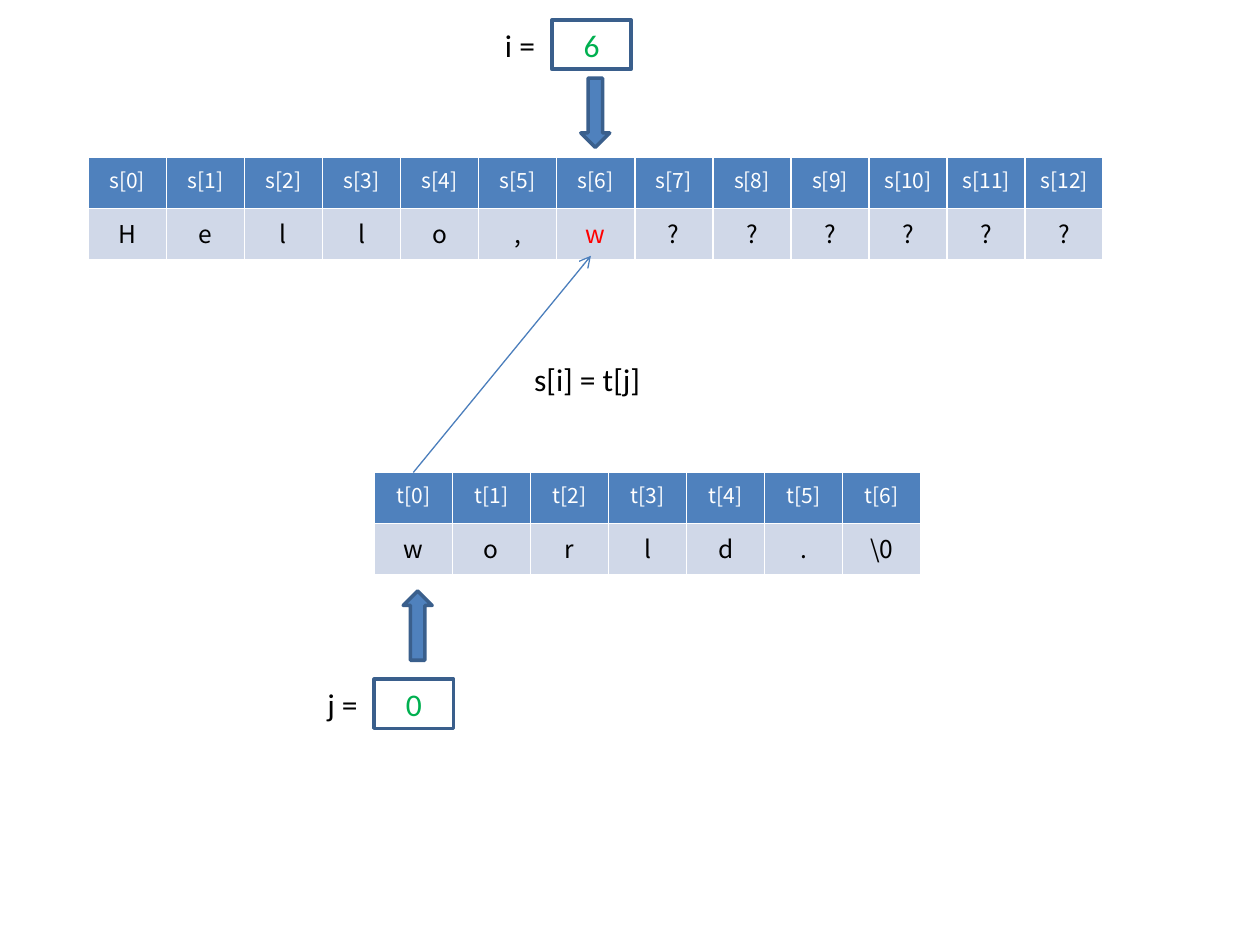
from dataclasses import dataclass

from lxml import etree
from pptx import Presentation
from pptx import util as u
from pptx.dml.color import RGBColor
from pptx.enum import shapes, text
from pptx.oxml import ns

# Content: array name, cell values, left, top, index of the highlighted cell
ARRAYS = [
    ("s", ["H", "e", "l", "l", "o", ",", "w"] + ["?"] * 6, 0.7, 1.25, 6),
    ("t", ["w", "o", "r", "l", "d", ".", "\\0"], 2.97, 3.75, None),
]
# Counters: label, label left, value, box left, top
COUNTERS = [("i =", 3.91, "6", 4.38, 0.16), ("j =", 2.5, "0", 2.97, 5.39)]
# Pointers: left, top, rotation
POINTERS = [(4.61, 0.62, 0), (3.2, 4.69, 180)]
ASSIGNMENT = ("s[i] = t[j]", 4.14, 2.81, 1.05)
COPY_FROM, COPY_TO = (3.28, 3.75), (4.69, 2.03)

COLUMN, ROW = 0.62, 0.405
BOX_WIDTH, BOX_HEIGHT = 0.63, 0.39
LABEL_WIDTH, LABEL_HEIGHT = 0.44, 0.4
POINTER_WIDTH, POINTER_HEIGHT = 0.23, 0.55


@dataclass(frozen=True)
class Theme:
    blue: str = "4F81BD"
    outline: str = "3A5F8C"
    link: str = "4B7EBC"
    band: str = "D0D8E8"
    white: str = "FFFFFF"
    black: str = "000000"
    red: str = "FF0000"
    green: str = "00B050"
    table_font: str = "Noto Sans CJK JP"
    font: str = "Calibri"
    header_size: int = 12
    cell_size: int = 14
    label_size: int = 18


THEME = Theme()


def rgb(color):
    return RGBColor.from_string(color)


def inches(*lengths):
    return [u.Inches(length) for length in lengths]


def write(frame, words, font, size, color, align=text.PP_ALIGN.CENTER):
    paragraph = frame.paragraphs[0]
    paragraph.text = words
    paragraph.alignment = align
    paragraph.font.name = font
    paragraph.font.size = u.Pt(size)
    paragraph.font.color.rgb = rgb(color)


def set_borders(cell, color, width):
    properties = cell._tc.get_or_add_tcPr()
    for position, side in enumerate(("lnL", "lnR", "lnT", "lnB")):
        line = etree.Element(ns.qn(f"a:{side}"), w=str(u.Pt(width)))
        fill = etree.SubElement(line, ns.qn("a:solidFill"))
        etree.SubElement(fill, ns.qn("a:srgbClr"), val=color)
        properties.insert(position, line)


def style_cell(cell, words, fill, size, color):
    cell.fill.solid()
    cell.fill.fore_color.rgb = rgb(fill)
    set_borders(cell, THEME.white, 1)
    write(cell.text_frame, words, THEME.table_font, size, color)


def add_array(slide, name, values, left, top, highlighted):
    table = slide.shapes.add_table(
        2, len(values), *inches(left, top, COLUMN * len(values), 2 * ROW)).table
    for row in table.rows:
        row.height = u.Inches(ROW)
    for index, value in enumerate(values):
        table.columns[index].width = u.Inches(COLUMN)
        style_cell(table.cell(0, index), f"{name}[{index}]",
                   THEME.blue, THEME.header_size, THEME.white)
        color = THEME.red if index == highlighted else THEME.black
        style_cell(table.cell(1, index), value, THEME.band, THEME.cell_size, color)


def add_outlined(slide, preset, fill, *place):
    shape = slide.shapes.add_shape(preset, *inches(*place))
    shape.shadow.inherit = False
    shape.fill.solid()
    shape.fill.fore_color.rgb = rgb(fill)
    shape.line.color.rgb = rgb(THEME.outline)
    shape.line.width = u.Pt(2)
    return shape


def add_label(slide, words, left, top, width):
    frame = slide.shapes.add_textbox(
        *inches(left, top, width, LABEL_HEIGHT)).text_frame
    frame.word_wrap = False
    frame.auto_size = text.MSO_AUTO_SIZE.SHAPE_TO_FIT_TEXT
    write(frame, words, THEME.font, THEME.label_size, THEME.black,
          text.PP_ALIGN.LEFT)


def add_counter(slide, label, label_left, value, box_left, top):
    box = add_outlined(slide, shapes.MSO_SHAPE.RECTANGLE, THEME.white,
                       box_left, top, BOX_WIDTH, BOX_HEIGHT)
    box.text_frame.vertical_anchor = text.MSO_ANCHOR.MIDDLE
    write(box.text_frame, value, THEME.font, THEME.label_size, THEME.green)
    add_label(slide, label, label_left, top, LABEL_WIDTH)


def add_copy_arrow(slide):
    arrow = slide.shapes.add_connector(
        shapes.MSO_CONNECTOR.STRAIGHT, *inches(*COPY_FROM, *COPY_TO))
    arrow.line.color.rgb = rgb(THEME.link)
    arrow.line.width = u.Pt(0.75)
    etree.SubElement(arrow.line._get_or_add_ln(), ns.qn("a:tailEnd"), type="arrow")
    etree.SubElement(arrow._element.spPr, ns.qn("a:effectLst"))


def main():
    deck = Presentation()
    deck.slide_width, deck.slide_height = inches(10, 7.5)
    slide = deck.slides.add_slide(deck.slide_layouts[6])

    # Source and target arrays
    for array in ARRAYS:
        add_array(slide, *array)

    # Index counters and the block arrows that point at the current cells
    for counter in COUNTERS:
        add_counter(slide, *counter)
    for left, top, rotation in POINTERS:
        pointer = add_outlined(slide, shapes.MSO_SHAPE.DOWN_ARROW, THEME.blue,
                               left, top, POINTER_WIDTH, POINTER_HEIGHT)
        pointer.rotation = rotation

    # Assignment of one character
    add_label(slide, *ASSIGNMENT)
    add_copy_arrow(slide)

    deck.save("out.pptx")


if __name__ == "__main__":
    main()
